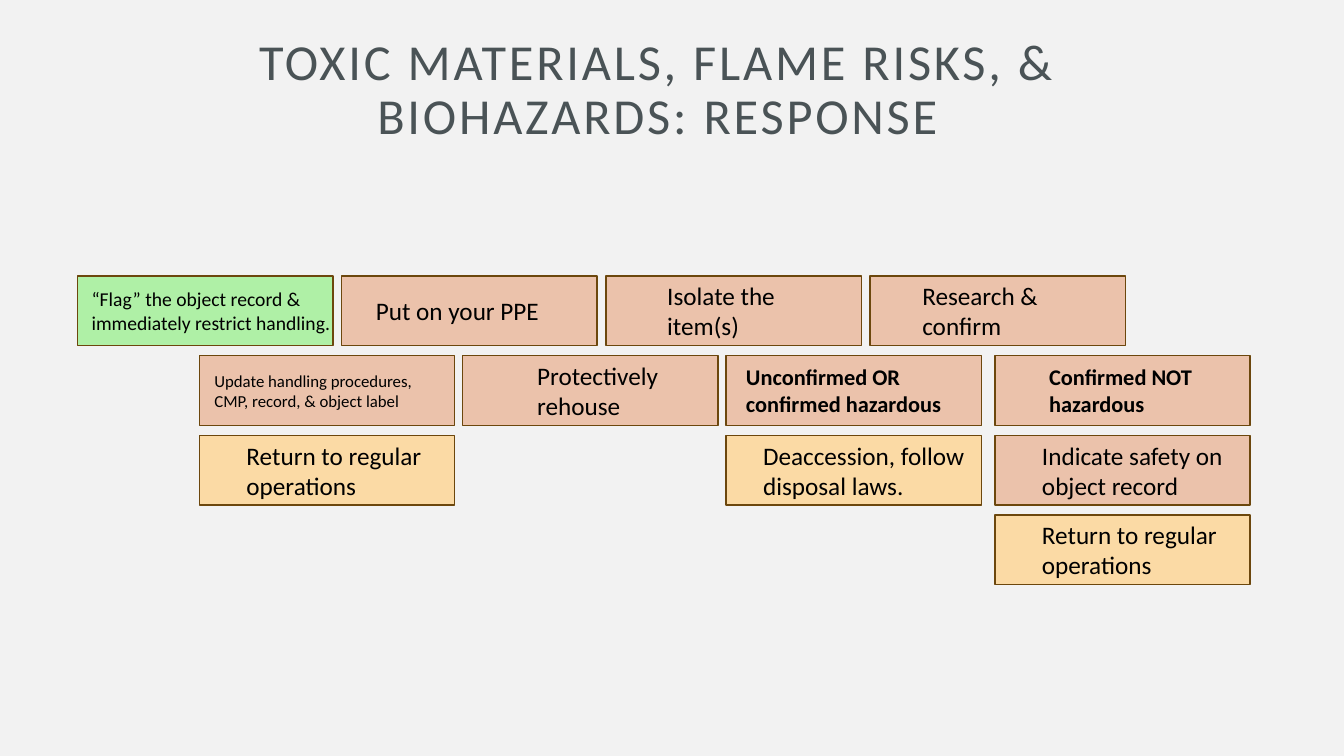
"""Build the hazard response slide: a title over four rows of step boxes."""
from dataclasses import dataclass

from pptx import Presentation
from pptx.dml.color import RGBColor
from pptx.enum.shapes import MSO_SHAPE
from pptx.enum.text import MSO_ANCHOR, MSO_AUTO_SIZE, PP_ALIGN
from pptx.util import Pt


@dataclass(frozen=True)
class Theme:
    font: str = "Calibri"
    background: str = "F2F2F2"
    heading: str = "4A5356"
    ink: str = "000000"
    border: str = "6C470D"
    flag: str = "AFF0A6"
    step: str = "EBC2AB"
    outcome: str = "FBDAA5"
    title_size: int = 36
    body: int = 18
    verdict: int = 16
    note: int = 14
    small: int = 12


theme = Theme()


def style_font(font, size, colour, bold=False):
    for key, value in {"name": theme.font, "size": Pt(size), "bold": bold}.items():
        setattr(font, key, value)
    font.color.rgb = RGBColor.from_string(colour)


deck = Presentation()
deck.slide_width, deck.slide_height = Pt(960), Pt(540)
slide = deck.slides.add_slide(deck.slide_layouts[5])
slide.background.fill.solid()
slide.background.fill.fore_color.rgb = RGBColor.from_string(theme.background)

heading = slide.shapes.title
for key, value in {"left": 63.4, "top": 37.4, "width": 812.9, "height": 55.4}.items():
    setattr(heading, key, Pt(value))
heading_frame = heading.text_frame
heading_format = {
    "margin_left": Pt(14.4), "margin_right": Pt(14.4), "margin_top": 0, "margin_bottom": 0,
    "vertical_anchor": MSO_ANCHOR.MIDDLE, "word_wrap": True, "auto_size": MSO_AUTO_SIZE.NONE,
}
for key, value in heading_format.items():
    setattr(heading_frame, key, value)
heading_line = heading_frame.paragraphs[0]
heading_line.alignment, heading_line.line_spacing = PP_ALIGN.CENTER, 0.9
heading_run = heading_line.add_run()
heading_run.text = "TOXIC MATERIALS, FLAME RISKS, & BIOHAZARDS: RESPONSE"
style_font(heading_run.font, theme.title_size, theme.heading)
heading_run.font._element.set("spc", "200")

BOX_WIDTH, BOX_HEIGHT = 182.4, 49.7
FIRST_ROW, ROW_PITCH = 197.2, 56.9
START = [55.4 + 188.7 * column for column in range(4)]
BRANCH = [142.4 + 188.1 * column for column in range(3)]
SAFE = 710.6

# row, left, fill, wording, lines, size, bold, indent, wording width
steps = [
    (0, START[0], theme.flag, "“Flag” the object record & immediately restrict handling.",
     2, theme.note, False, 2.9, 192.2),
    (0, START[1], theme.step, "Put on your PPE", 1, theme.body, False, 17.3, 171.4),
    (0, START[2], theme.step, "Isolate the item(s)", 2, theme.body, False, 36.7, 121),
    (0, START[3], theme.step, "Research & confirm", 2, theme.body, False, 30.2, 121),
    (1, BRANCH[0], theme.step, "Update handling procedures, CMP, record, & object label",
     2, theme.small, False, 3.6, 179.3),
    (1, BRANCH[1], theme.step, "Protectively rehouse", 2, theme.body, False, 46.1, 121),
    (1, BRANCH[2], theme.step, "Unconfirmed OR confirmed hazardous",
     2, theme.verdict, True, 7.2, 192.2),
    (1, SAFE, theme.step, "Confirmed NOT hazardous", 2, theme.verdict, True, 31.7, 179.3),
    (2, BRANCH[0], theme.outcome, "Return to regular operations",
     2, theme.body, False, 26.6, 165.6),
    (2, BRANCH[2], theme.outcome, "Deaccession, follow disposal laws.",
     2, theme.body, False, 19.4, 165.6),
    (2, SAFE, theme.step, "Indicate safety on object record", 2, theme.body, False, 26.6, 167),
    (3, SAFE, theme.outcome, "Return to regular operations", 2, theme.body, False, 26.6, 165.6),
]

for row, left, fill, wording, lines, size, bold, indent, width in steps:
    top = FIRST_ROW + ROW_PITCH * row
    step_box = slide.shapes.add_shape(
        MSO_SHAPE.RECTANGLE, Pt(left), Pt(top), Pt(BOX_WIDTH), Pt(BOX_HEIGHT))
    step_box.shadow.inherit = False
    step_box.fill.solid()
    step_box.fill.fore_color.rgb = RGBColor.from_string(fill)
    step_box.line.color.rgb = RGBColor.from_string(theme.border)
    step_box.line.width = Pt(1)

    height = lines * size * 1.2 + 7.2
    step_label = slide.shapes.add_textbox(
        Pt(left + indent), Pt(top + (BOX_HEIGHT - height) / 2), Pt(width), Pt(height))
    label_frame = step_label.text_frame
    label_frame.word_wrap = True
    label_frame.auto_size = MSO_AUTO_SIZE.SHAPE_TO_FIT_TEXT
    label_run = label_frame.paragraphs[0].add_run()
    label_run.text = wording
    style_font(label_run.font, size, theme.ink, bold)

deck.save("out.pptx")
